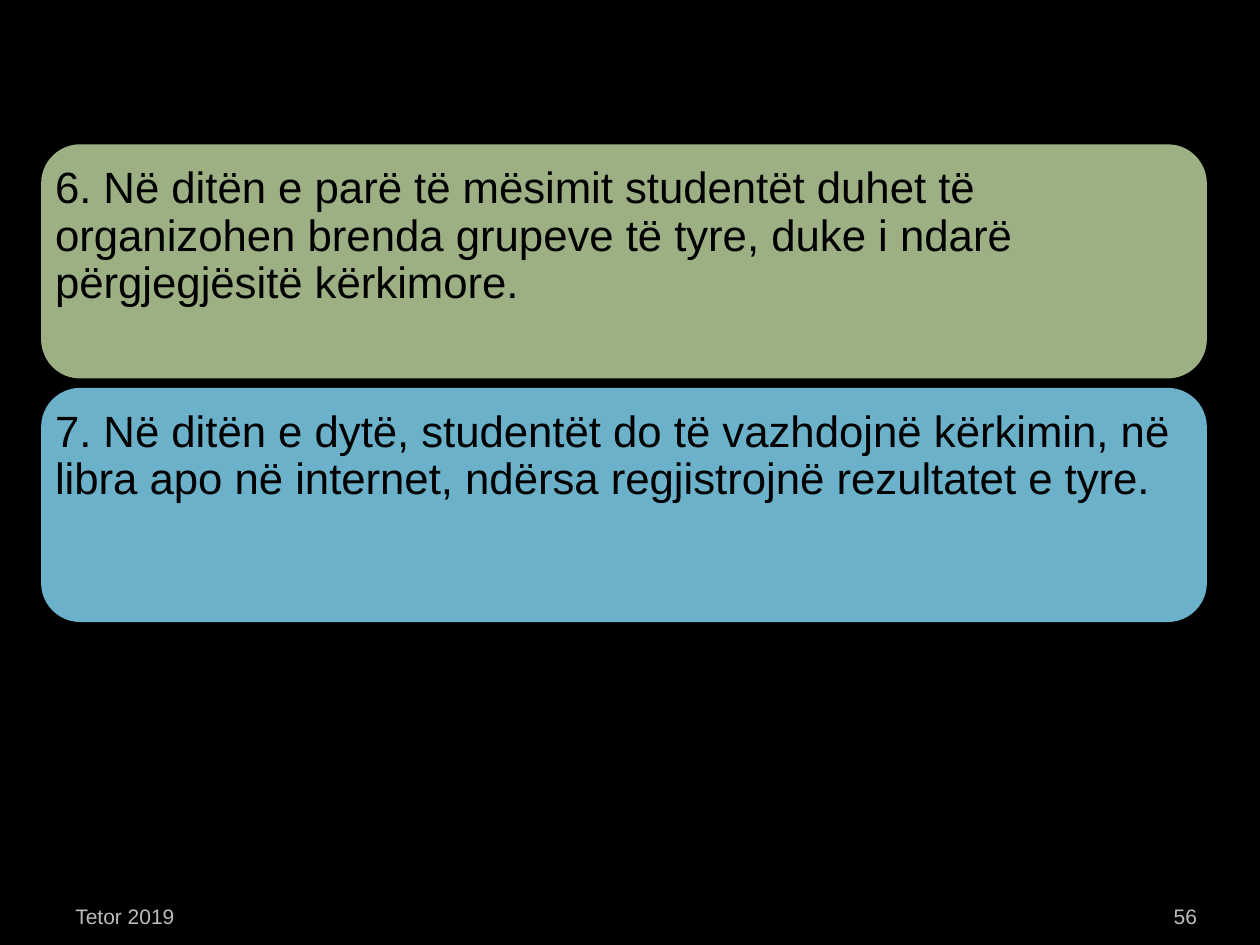
from dataclasses import dataclass
from lxml.etree import fromstring
from pptx import Presentation
from pptx.dml.color import RGBColor
from pptx.enum.shapes import MSO_SHAPE
from pptx.enum.text import MSO_ANCHOR, PP_ALIGN
from pptx.util import Cm, Pt

INNER = (
    '<a:effectLst xmlns:a="http://schemas.openxmlformats.org/drawingml/2006/main">'
    '<a:innerShdw blurRad="95250" dist="0" dir="0"><a:srgbClr val="000000">'
    '<a:alpha val="50000"/></a:srgbClr></a:innerShdw></a:effectLst>'
)


@dataclass(frozen=True)
class Theme:
    font: str = "Arial"
    back: str = "000000"
    ink: str = "000000"
    green: str = "9CB084"
    blue: str = "6BB1C9"
    grey: str = "BDBDBD"
    body: int = 25
    small: int = 12


class Deck:
    def __init__(self, theme):
        self.theme = theme
        self.file = Presentation()
        self.file.slide_width, self.file.slide_height = Cm(25.4), Cm(19.05)
        self.slide = self.file.slides.add_slide(self.file.slide_layouts[6])
        self.paint(self.slide.background.fill, theme.back)

    def paint(self, fill, color):
        fill.solid()
        fill.fore_color.rgb = RGBColor.from_string(color)

    def label(self, shape, text, size, color, frame, para):
        """Put text in a shape; frame and para hold format values."""
        box = shape.text_frame
        line = box.paragraphs[0]
        run = line.add_run()
        run.text = text
        font = {"name": self.theme.font, "size": Pt(size)}
        for item, values in ((box, frame), (line, para), (run.font, font)):
            for name, value in values.items():
                setattr(item, name, value)
        run.font.color.rgb = RGBColor.from_string(color)

    def card(self, left, top, width, height, text, color):
        shape = self.slide.shapes.add_shape(
            MSO_SHAPE.ROUNDED_RECTANGLE,
            Cm(left), Cm(top), Cm(width), Cm(height))
        self.paint(shape.fill, color)
        shape.line.fill.background()
        shape.shadow.inherit = False
        effect = shape._element.spPr.find(
            "{http://schemas.openxmlformats.org/drawingml/2006/main}effectLst")
        effect.append(fromstring(INNER)[0])
        frame = {"word_wrap": True, "vertical_anchor": MSO_ANCHOR.TOP,
                 "margin_left": Cm(0.05), "margin_right": Cm(0.05),
                 "margin_top": Cm(0.21), "margin_bottom": Cm(0)}
        para = {"alignment": PP_ALIGN.LEFT, "line_spacing": 0.9}
        self.label(shape, text, self.theme.body, self.theme.ink, frame, para)

    def foot(self, left, width, text, align, side):
        shape = self.slide.shapes.add_textbox(
            Cm(left), Cm(17.83), Cm(width), Cm(1.02))
        frame = {"word_wrap": True, "vertical_anchor": MSO_ANCHOR.BOTTOM,
                 "margin_left": Cm(side), "margin_right": Cm(side)}
        self.label(shape, text, self.theme.small, self.theme.grey,
                   frame, {"alignment": align})

    def save(self):
        self.file.save("out.pptx")


def main():
    theme = Theme()
    deck = Deck(theme)
    cards = (
        ("6. Në ditën e parë të mësimit studentët duhet të organizohen brenda "
         "grupeve të tyre, duke i ndarë përgjegjësitë kërkimore.", theme.green),
        ("7. Në ditën e dytë, studentët do të vazhdojnë kërkimin, në libra apo "
         "në internet, ndërsa regjistrojnë rezultatet e tyre.", theme.blue),
    )
    height, gap = 4.72, 0.19
    for row, (text, color) in enumerate(cards):
        deck.card(0.83, 2.91 + row * (height + gap), 23.5, height, text, color)
    deck.foot(1.27, 5.92, "Tetor 2019", PP_ALIGN.LEFT, 0.25)
    deck.foot(22.02, 2.11, "56", PP_ALIGN.RIGHT, 0)
    deck.save()


if __name__ == "__main__":
    main()
